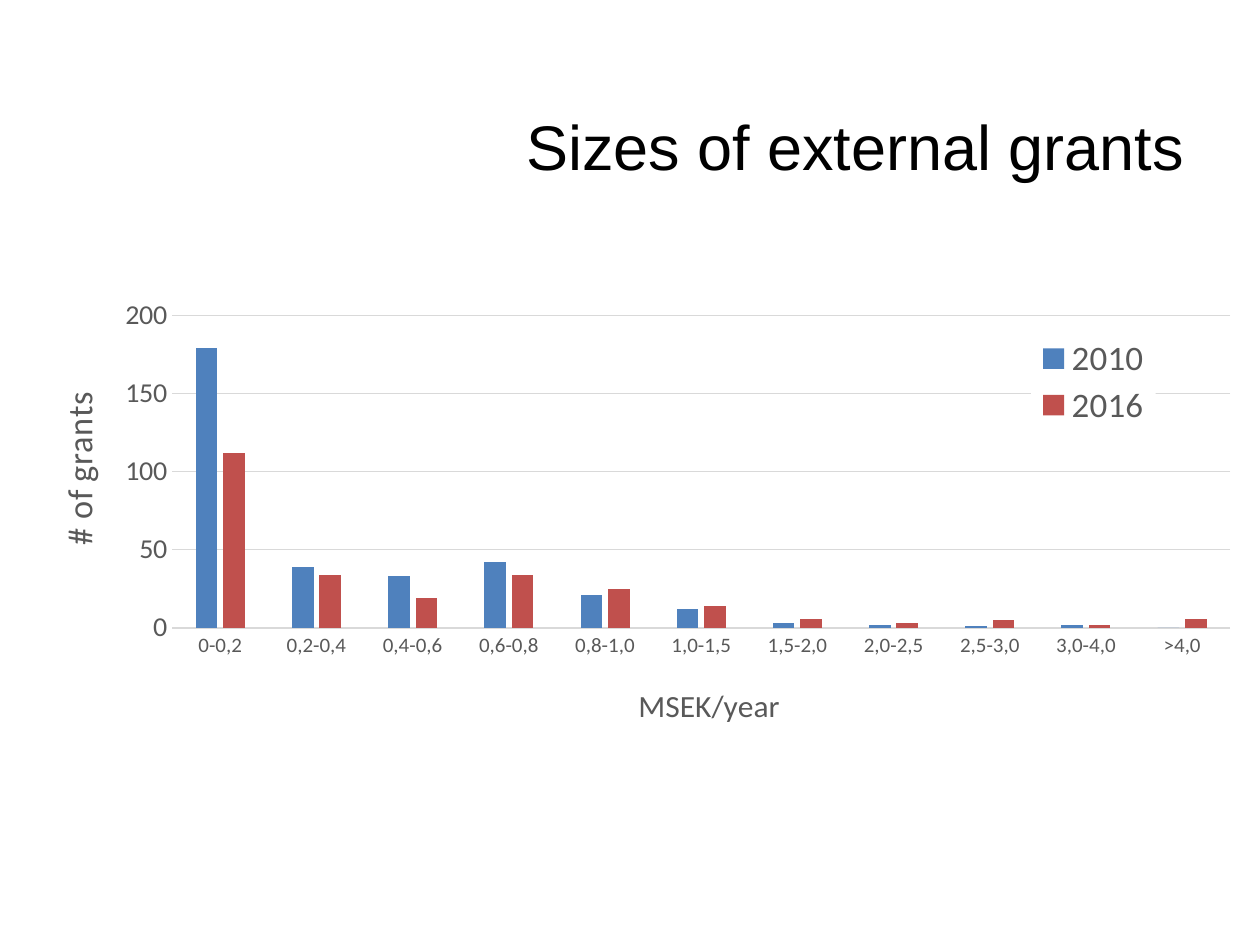
from lxml import etree
from pptx import Presentation
from pptx.chart.data import CategoryChartData
from pptx.dml.color import RGBColor
from pptx.enum.chart import XL_CHART_TYPE, XL_LEGEND_POSITION, XL_TICK_MARK
from pptx.enum.text import MSO_ANCHOR, PP_ALIGN
from pptx.oxml import parse_xml
from pptx.oxml.ns import nsdecls, qn
from pptx.util import Inches, Pt

COLUMN = XL_CHART_TYPE.COLUMN_CLUSTERED
RIGHT = XL_LEGEND_POSITION.RIGHT
NONE = XL_TICK_MARK.NONE

# Content
TITLE = "Sizes of external grants"
SIZES = ["0-0,2", "0,2-0,4", "0,4-0,6", "0,6-0,8", "0,8-1,0", "1,0-1,5",
         "1,5-2,0", "2,0-2,5", "2,5-3,0", "3,0-4,0", ">4,0"]
GRANTS = [
    ("2010", "blue", [179, 39, 33, 42, 21, 12, 3, 2, 1, 2, 0]),
    ("2016", "red", [112, 34, 19, 34, 25, 14, 6, 3, 5, 2, 6]),
]
COLORS = {"blue": "4F81BD", "red": "C0504D", "text": "595959",
          "grid": "D9D9D9", "white": "FFFFFF", "black": "000000"}


def color(name):
    return RGBColor.from_string(COLORS[name])


def style(font, size, name="text", face="Calibri"):
    font.size, font.name, font.bold = Pt(size), face, False
    font.color.rgb = color(name)


def rule(line):
    line.width = Pt(0.75)
    line.color.rgb = color("grid")


def place(part, index, **spots):
    """Give a chart part a manual layout, in shares of the chart's size."""
    for old in part.findall(qn("c:layout")):
        part.remove(old)
    layout = etree.Element(qn("c:layout"))
    manual = etree.SubElement(layout, qn("c:manualLayout"))
    if part.tag == qn("c:plotArea"):
        etree.SubElement(manual, qn("c:layoutTarget")).set("val", "inner")
    for key in ("x", "y"):
        etree.SubElement(manual, qn(f"c:{key}Mode")).set("val", "edge")
    for key, val in spots.items():
        etree.SubElement(manual, qn(f"c:{key}")).set("val", str(val))
    part.insert(index, layout)


def label(axis, text, size, turn, x, y):
    title = axis.axis_title
    run = title.text_frame.paragraphs[0].add_run()
    run.text = text
    style(run.font, size)
    node = title._element
    body = node.find(".//" + qn("a:bodyPr"))
    body.set("rot", str(turn * 60000))
    body.set("vert", "horz")
    place(node, 1, x=x, y=y)


deck = Presentation()
deck.slide_width, deck.slide_height = Inches(10), Inches(7.5)
slide = deck.slides.add_slide(deck.slide_layouts[5])

# Title
head = slide.shapes.title
head.left, head.top = Inches(2.24), Inches(0.53)
head.width, head.height = Inches(7.26), Inches(1.25)
head.text_frame.vertical_anchor = MSO_ANCHOR.MIDDLE
para = head.text_frame.paragraphs[0]
para.alignment = PP_ALIGN.RIGHT
run = para.add_run()
run.text = TITLE
style(run.font, 36, "black", "Arial")

# Chart
data = CategoryChartData()
data.categories = SIZES
for year, _, counts in GRANTS:
    data.add_series(year, counts)
chart = slide.shapes.add_chart(COLUMN, Inches(0.28), Inches(2.1),
                               Inches(9.88), Inches(3.73), data).chart
chart.has_title = False
style(chart.font, 10, "black")
place(chart._chartSpace.find(".//" + qn("c:plotArea")), 0,
      x=0.11, y=0.11, w=0.85, h=0.68)

# Columns
plot = chart.plots[0]
plot.gap_width, plot.overlap = 219, -27
plot.vary_by_categories = False
for series, (_, name, _) in zip(plot.series, GRANTS):
    series.format.fill.solid()
    series.format.fill.fore_color.rgb = color(name)

# Axes
cat, val = chart.category_axis, chart.value_axis
for axis, size in ((cat, 12), (val, 16)):
    axis.major_tick_mark = axis.minor_tick_mark = NONE
    style(axis.tick_labels.font, size)
rule(cat.format.line)
val.format.line.fill.background()
val.minimum_scale, val.maximum_scale, val.major_unit = 0, 200, 50
val.has_major_gridlines = True
rule(val.major_gridlines.format.line)
label(cat, "MSEK/year", 18, 0, 0.48, 0.9)
label(val, "# of grants", 20, -90, 0.01, 0.27)

# Legend on a white panel
chart.has_legend = True
legend = chart.legend
legend.position = RIGHT
legend.include_in_layout = True
style(legend.font, 20)
node = legend._element
place(node, 1, x=0.8, y=0.15, w=0.1, h=0.21)
node.find(qn("c:overlay")).addnext(parse_xml(
    f'<c:spPr {nsdecls("c", "a")}><a:solidFill><a:srgbClr '
    f'val="{COLORS["white"]}"/></a:solidFill></c:spPr>'))

deck.save("out.pptx")
